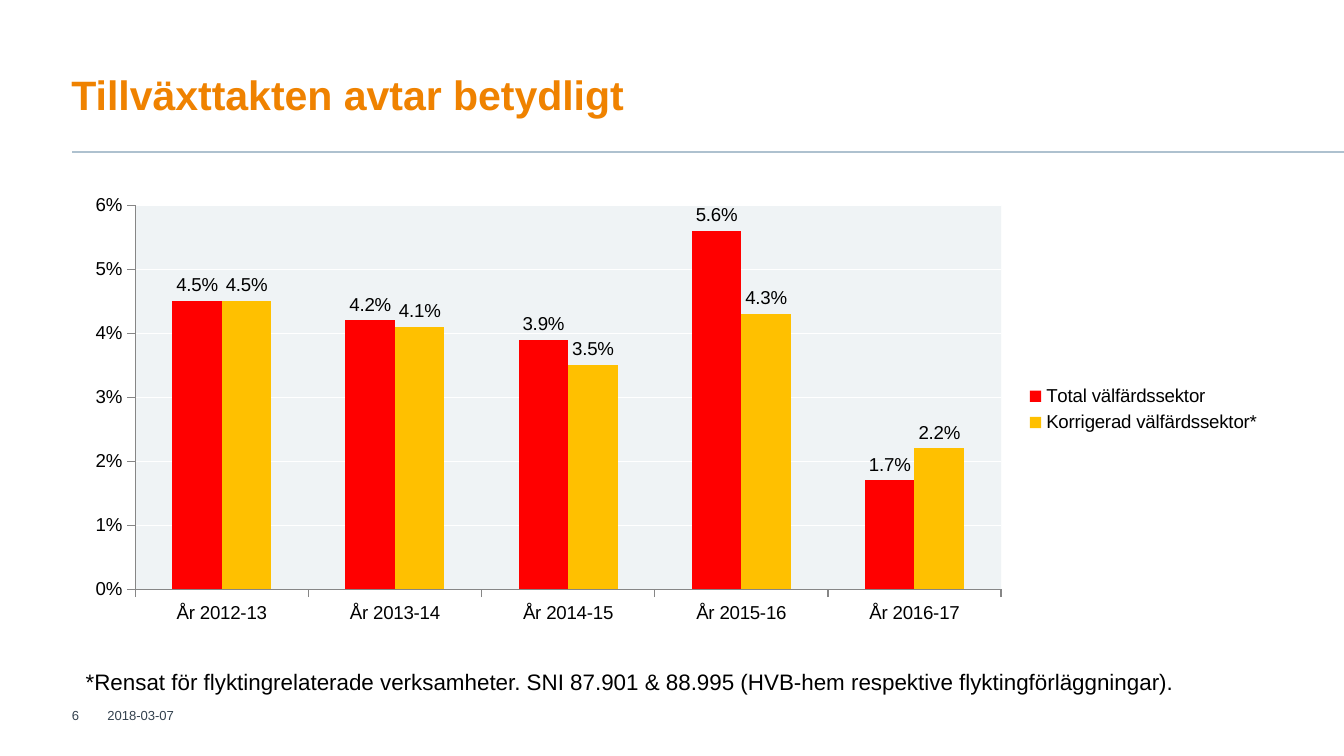
from dataclasses import dataclass

from lxml import etree
from pptx import Presentation
from pptx.chart.data import CategoryChartData
from pptx.dml.color import RGBColor
from pptx.enum.chart import XL_CHART_TYPE, XL_LABEL_POSITION, XL_LEGEND_POSITION, XL_TICK_MARK
from pptx.enum.shapes import MSO_CONNECTOR
from pptx.enum.text import MSO_ANCHOR, MSO_AUTO_SIZE, PP_ALIGN
from pptx.oxml import parse_xml
from pptx.oxml.ns import nsdecls, qn
from pptx.util import Cm, Pt

CLUSTERED = XL_CHART_TYPE.COLUMN_CLUSTERED
LABEL_ABOVE = XL_LABEL_POSITION.OUTSIDE_END
LEGEND_RIGHT = XL_LEGEND_POSITION.RIGHT
TICK_OUT = XL_TICK_MARK.OUTSIDE
STRAIGHT = MSO_CONNECTOR.STRAIGHT
BOTTOM, MIDDLE, TOP = MSO_ANCHOR.BOTTOM, MSO_ANCHOR.MIDDLE, MSO_ANCHOR.TOP
NO_AUTOFIT = MSO_AUTO_SIZE.NONE
LEFT = PP_ALIGN.LEFT
TITLE_ONLY = 5


@dataclass(frozen=True)
class Theme:
    """Colours, font and type sizes of the deck."""
    font: str = "Arial"
    title: str = "EF8200"
    text: str = "000000"
    footer: str = "33414E"
    rule: str = "AEC1CF"
    axis: str = "868686"
    plot: str = "EFF3F5"
    grid: str = "FFFFFF"
    total: str = "FF0000"
    adjusted: str = "FFC000"
    title_size: int = 22
    note_size: int = 12
    chart_size: int = 10
    footer_size: int = 7


THEME = Theme()
PAGE_WIDTH, PAGE_HEIGHT = 25.4, 14.29
YEARS = [f"År {year}-{year - 1999}" for year in range(2012, 2017)]
SERIES = [
    ("Total välfärdssektor", THEME.total, (0.045, 0.042, 0.039, 0.056, 0.017)),
    ("Korrigerad välfärdssektor*", THEME.adjusted, (0.045, 0.041, 0.035, 0.043, 0.022)),
]
PLOT_LAYOUT = {"x": 0.053, "y": 0.044, "w": 0.72, "h": 0.858}


def style_font(font, size, color, bold=False):
    """Give a font the theme typeface, a size and a colour."""
    font.name = THEME.font
    font.size = Pt(size)
    font.bold = bold
    font.color.rgb = RGBColor.from_string(color)


def style_line(line, color, width):
    """Set the colour and width of a line."""
    line.color.rgb = RGBColor.from_string(color)
    line.width = Pt(width)


def style_fill(fill, color):
    """Set a solid fill."""
    fill.solid()
    fill.fore_color.rgb = RGBColor.from_string(color)


def set_margins(frame, left, top, right, bottom):
    """Set the inner margins of a text frame in centimetres."""
    frame.margin_left, frame.margin_top = Cm(left), Cm(top)
    frame.margin_right, frame.margin_bottom = Cm(right), Cm(bottom)


def add_title(page, text, left, top, width, height):
    """Place and format the title placeholder."""
    title = page.shapes.title
    title.left, title.top = Cm(left), Cm(top)
    title.width, title.height = Cm(width), Cm(height)
    frame = title.text_frame
    frame.text = text
    frame.auto_size = NO_AUTOFIT
    frame.vertical_anchor = BOTTOM
    set_margins(frame, 0, 0, 0.25, 0.13)
    para = frame.paragraphs[0]
    para.alignment = LEFT
    para.line_spacing = 0.9
    style_font(para.runs[0].font, THEME.title_size, THEME.title, bold=True)


def add_rule(page, left, top, right):
    """Draw the horizontal rule below the title."""
    rule = page.shapes.add_connector(STRAIGHT, Cm(left), Cm(top), Cm(right), Cm(top))
    style_line(rule.line, THEME.rule, 1)
    etree.SubElement(rule.element.spPr, qn("a:effectLst"))


def add_text(page, text, size, color, left, top, width, height, anchor=TOP, inset=0.25):
    """Add a single-line text box."""
    box = page.shapes.add_textbox(Cm(left), Cm(top), Cm(width), Cm(height))
    frame = box.text_frame
    frame.text = text
    frame.word_wrap = False
    frame.vertical_anchor = anchor
    set_margins(frame, inset, 0.13, inset, 0.13)
    para = frame.paragraphs[0]
    para.alignment = LEFT
    style_font(para.runs[0].font, size, color)


def add_footer(page, number, date, left, top, height):
    """Place the page number and the date on one row."""
    style = (THEME.footer_size, THEME.footer)
    add_text(page, number, *style, left, top, 0.67, height, MIDDLE, 0)
    add_text(page, date, *style, left + 0.67, top, 1.52, height, MIDDLE, 0)


def format_plot_area(chart):
    """Fix the inner plot position and fill its background."""
    area = chart.element.find(f".//{qn('c:plotArea')}")
    layout = area.find(qn("c:layout"))
    if layout is None:
        layout = etree.Element(qn("c:layout"))
        area.insert(0, layout)
    manual = etree.SubElement(layout, qn("c:manualLayout"))
    etree.SubElement(manual, qn("c:layoutTarget"), val="inner")
    for name in "xy":
        etree.SubElement(manual, qn(f"c:{name}Mode"), val="edge")
    for name, share in PLOT_LAYOUT.items():
        etree.SubElement(manual, qn(f"c:{name}"), val=str(share))
    area.append(parse_xml(
        f'<c:spPr {nsdecls("c", "a")}><a:solidFill>'
        f'<a:srgbClr val="{THEME.plot}"/></a:solidFill></c:spPr>'))


def format_axes(chart):
    """Format both axes and the gridlines."""
    for axis in (chart.category_axis, chart.value_axis):
        axis.major_tick_mark = TICK_OUT
        style_line(axis.format.line, THEME.axis, 0.75)
    values = chart.value_axis
    values.minimum_scale, values.maximum_scale, values.major_unit = 0, 0.06, 0.01
    values.tick_labels.number_format = "0%"
    values.tick_labels.number_format_is_linked = False
    values.has_major_gridlines = True
    style_line(values.major_gridlines.format.line, THEME.grid, 0.75)


def format_series(plot):
    """Colour the columns and label them with their values."""
    plot.gap_width, plot.overlap = 150, 0
    plot.vary_by_categories = False
    for series, (_, color, _) in zip(plot.series, SERIES):
        style_fill(series.format.fill, color)
        labels = series.data_labels
        labels.show_value = True
        labels.number_format = "0.0%"
        labels.number_format_is_linked = False
        labels.position = LABEL_ABOVE
        style_font(labels.font, THEME.chart_size, THEME.text)


def add_growth_chart(page, left, top, width, height):
    """Add the clustered column chart of yearly growth."""
    data = CategoryChartData()
    data.categories = YEARS
    for name, _, values in SERIES:
        data.add_series(name, values)
    chart = page.shapes.add_chart(
        CLUSTERED, Cm(left), Cm(top), Cm(width), Cm(height), data).chart
    style_font(chart.font, THEME.chart_size, THEME.text)
    chart.has_title = False
    chart.has_legend = True
    chart.legend.position = LEGEND_RIGHT
    chart.legend.include_in_layout = False
    format_plot_area(chart)
    format_axes(chart)
    format_series(chart.plots[0])


def build_growth_page(deck):
    """Build the page on the slowing growth rate."""
    page = deck.slides.add_slide(deck.slide_layouts[TITLE_ONLY])
    add_rule(page, 1.37, 2.87, PAGE_WIDTH)
    add_title(page, "Tillväxttakten avtar betydligt", 1.35, 0.69, 18.19, 1.7)
    add_growth_chart(page, 1.35, 3.51, 22.73, 8.46)
    add_text(page, "*Rensat för flyktingrelaterade verksamheter. SNI 87.901 & 88.995 "
             "(HVB-hem respektive flyktingförläggningar).",
             THEME.note_size, THEME.text, 1.37, 12.5, 21.13, 0.76)
    add_footer(page, "6", "2018-03-07", 1.36, 13.36, 0.33)


def main():
    """Create and save the deck."""
    deck = Presentation()
    deck.slide_width, deck.slide_height = Cm(PAGE_WIDTH), Cm(PAGE_HEIGHT)
    build_growth_page(deck)
    deck.save("out.pptx")


if __name__ == "__main__":
    main()
